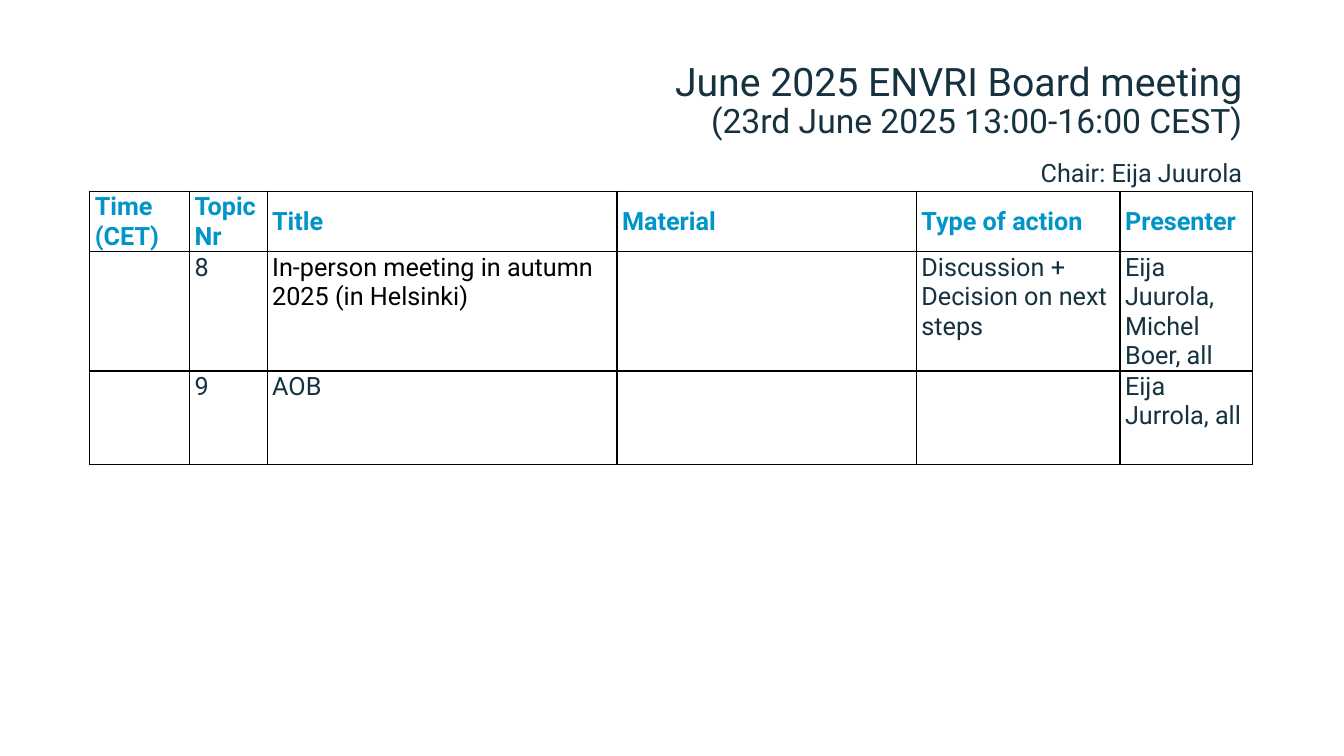
from dataclasses import dataclass

from lxml.etree import SubElement
from pptx import Presentation
from pptx.dml.color import RGBColor
from pptx.enum.text import MSO_ANCHOR as Anchor, MSO_AUTO_SIZE as AutoSize, PP_ALIGN as Align
from pptx.oxml.ns import qn
from pptx.util import Inches, Pt


@dataclass(frozen=True)
class Theme:
    font: str = "Roboto"
    ink: str = "163241"
    accent: str = "0095C8"
    black: str = "000000"
    paper: str = "FFFFFF"
    title_size: int = 28
    date_size: int = 24
    body_size: int = 18
    border_width: int = 1


THEME = Theme()
COLUMN_WIDTHS = (0.99, 0.77, 3.47, 2.97, 2.02, 1.31)
ROW_HEIGHTS = (0.58, 0.93, 0.93)
AGENDA = (
    ("Time (CET)", "Topic Nr", "Title", "Material", "Type of action", "Presenter"),
    ("", "8", "In-person meeting in autumn 2025\u00a0(in Helsinki)", "",
     "Discussion + Decision on next steps", "Eija Juurola, Michel Boer, all"),
    ("", "9", "AOB", "", "", "Eija Jurrola, all"),
)
BLACK_TOPIC = (1, 2)


def style_font(font, size, color=THEME.ink, bold=False):
    font.name = THEME.font
    font.size = Pt(size)
    font.bold = bold
    font.color.rgb = RGBColor.from_string(color)


def add_heading(slide, meeting, date):
    title = slide.shapes.title
    title.left, title.top = Inches(3.86), Inches(0.57)
    title.width, title.height = Inches(8.56), Inches(0.8)
    frame = title.text_frame
    frame.text = f"{meeting}\v{date}"
    frame.auto_size = AutoSize.NONE
    frame.vertical_anchor = Anchor.TOP
    heading = frame.paragraphs[0]
    heading.alignment = Align.RIGHT
    heading.line_spacing = 0.9
    for run, size in zip(heading.runs, (THEME.title_size, THEME.date_size)):
        style_font(run.font, size)


def add_chair(slide, text):
    chair = slide.shapes.add_textbox(Inches(9.12), Inches(1.51), Inches(3.3), Inches(0.4))
    frame = chair.text_frame
    frame.word_wrap = True
    frame.auto_size = AutoSize.SHAPE_TO_FIT_TEXT
    frame.text = text
    frame.paragraphs[0].alignment = Align.RIGHT
    style_font(frame.paragraphs[0].runs[0].font, THEME.body_size)


def add_borders(cell):
    properties = cell._tc.get_or_add_tcPr()
    for side in ("a:lnL", "a:lnR", "a:lnT", "a:lnB"):
        line = SubElement(properties, qn(side), w=str(Pt(THEME.border_width)))
        fill = SubElement(line, qn("a:solidFill"))
        SubElement(fill, qn("a:srgbClr"), val=THEME.black)


def fill_cell(cell, text, color, is_header):
    add_borders(cell)
    cell.fill.solid()
    cell.fill.fore_color.rgb = RGBColor.from_string(THEME.paper)
    cell.margin_left = cell.margin_right = cell.margin_top = Inches(0.01)
    cell.margin_bottom = 0
    cell.vertical_anchor = Anchor.MIDDLE if is_header else Anchor.TOP
    cell.text = text
    entry = cell.text_frame.paragraphs[0]
    entry._p.get_or_add_pPr().set("marL", str(Inches(0.04)))
    for run in entry.runs:
        style_font(run.font, THEME.body_size, color, is_header)


def add_agenda(slide):
    agenda = slide.shapes.add_table(
        len(ROW_HEIGHTS), len(COLUMN_WIDTHS), Inches(0.89), Inches(1.9),
        Inches(sum(COLUMN_WIDTHS)), Inches(sum(ROW_HEIGHTS))).table
    agenda.horz_banding = False
    for column, width in zip(agenda.columns, COLUMN_WIDTHS):
        column.width = Inches(width)
    for row, height in zip(agenda.rows, ROW_HEIGHTS):
        row.height = Inches(height)
    for row_index, entries in enumerate(AGENDA):
        for column_index, text in enumerate(entries):
            is_header = row_index == 0
            color = THEME.accent if is_header else THEME.ink
            if (row_index, column_index) == BLACK_TOPIC:
                color = THEME.black
            fill_cell(agenda.cell(row_index, column_index), text, color, is_header)


def main():
    deck = Presentation()
    deck.slide_width, deck.slide_height = Inches(13.33), Inches(7.5)
    slide = deck.slides.add_slide(deck.slide_layouts.get_by_name("Title Only"))
    add_heading(slide, "June 2025 ENVRI Board meeting", "(23rd June 2025 13:00-16:00 CEST)")
    add_agenda(slide)
    add_chair(slide, "Chair: Eija Juurola")
    deck.save("out.pptx")


if __name__ == "__main__":
    main()
